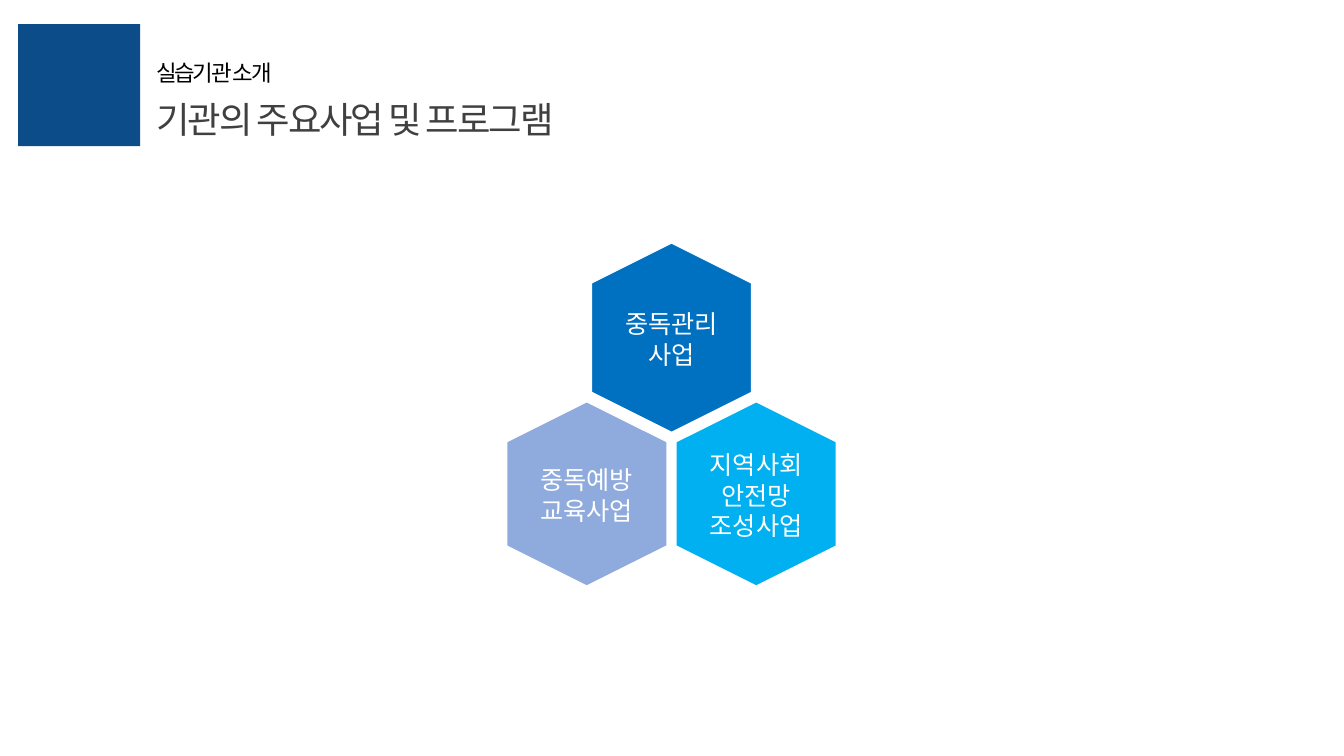
import pptx
import pptx.dml.color
import pptx.enum.shapes
import pptx.enum.text
import pptx.oxml.ns
import pptx.util
from lxml import etree

Inches = pptx.util.Inches
Pt = pptx.util.Pt
RGBColor = pptx.dml.color.RGBColor
Shape = pptx.enum.shapes.MSO_SHAPE
Align = pptx.enum.text.PP_ALIGN
Anchor = pptx.enum.text.MSO_ANCHOR
qn = pptx.oxml.ns.qn

WHITE = RGBColor(0xFF, 0xFF, 0xFF)
BLACK = RGBColor(0x00, 0x00, 0x00)
GRAY = RGBColor(0x40, 0x40, 0x40)
NAVY = RGBColor(0x0C, 0x4C, 0x89)
BLUE = RGBColor(0x00, 0x70, 0xC0)
LILAC = RGBColor(0x8F, 0xAA, 0xDC)
SKY = RGBColor(0x00, 0xB0, 0xF0)


class Deck:
    """Holds the style and the current slide, and draws each kind of element."""

    face = "Noto Sans CJK KR"

    def __init__(self):
        self.prs = pptx.Presentation()
        self.prs.slide_width = Inches(13.33)
        self.prs.slide_height = Inches(7.5)
        self.slide = self.prs.slides.add_slide(self.prs.slide_layouts[5])

    def style(self, para, size, color, align, space=0):
        font = para.font
        font.name, font.size, font.color.rgb = self.face, Pt(size), color
        props = para._p.pPr.find(qn("a:defRPr"))
        etree.SubElement(props, qn("a:ea")).set("typeface", self.face)
        if space:
            props.set("spc", str(int(space * 100)))
        para.alignment = align

    def place(self, shape, box):
        shape.left, shape.top, shape.width, shape.height = map(Inches, box)

    def head(self, shape, text, box, size, color):
        self.place(shape, box)
        frame = shape.text_frame
        frame.text = text
        frame.word_wrap = True
        frame.vertical_anchor = Anchor.TOP
        frame.auto_size = pptx.enum.text.MSO_AUTO_SIZE.SHAPE_TO_FIT_TEXT
        self.style(frame.paragraphs[0], size, color, Align.LEFT, -1.5)

    def title(self, text, box):
        self.head(self.slide.shapes.title, text, box, 26, GRAY)

    def topic(self, text, box):
        shape = self.slide.shapes.add_textbox(0, 0, 0, 0)
        self.head(shape, text, box, 16, BLACK)

    def block(self, kind, box, fill):
        shape = self.slide.shapes.add_shape(kind, *map(Inches, box))
        shape.shadow.inherit = False
        shape.fill.solid()
        shape.fill.fore_color.rgb = fill
        shape.line.fill.background()
        return shape

    def label(self, lines, x, y, side=1.4):
        box = (x - side / 2, y - side / 2, side, side)
        frame = self.slide.shapes.add_textbox(*map(Inches, box)).text_frame
        frame.text = "\n".join(lines)
        frame.word_wrap = True
        frame.vertical_anchor = Anchor.MIDDLE
        frame.margin_left = frame.margin_right = Inches(0.08)
        frame.margin_top = frame.margin_bottom = Inches(0.08)
        for para in frame.paragraphs:
            self.style(para, 18, WHITE, Align.CENTER)
            para.line_spacing = 0.9
            para.space_after = Pt(2.25)

    def cell(self, lines, x, y, long, fill, wide=1.59):
        box = (x - long / 2, y - wide / 2, long, wide)
        shape = self.block(Shape.HEXAGON, box, fill)
        shape.adjustments[0] = 0.25
        shape.rotation = 90
        shape.line.color.rgb = WHITE
        shape.line.width = Pt(1)
        self.label(lines, x, y + 0.03)


def main():
    deck = Deck()
    deck.block(Shape.RECTANGLE, (0.18, 0.24, 1.21, 1.21), NAVY)
    deck.topic("실습기관 소개", (1.45, 0.54, 5.55, 0.37))
    deck.title("기관의 주요사업 및 프로그램", (1.45, 0.91, 6.85, 0.54))
    mid, step, low = 6.66, 0.84, 4.9
    deck.cell(["중독관리", "사업"], mid, 3.35, 1.88, BLUE)
    deck.cell(["중독예방", "교육사업"], mid - step, low, 1.83, LILAC)
    deck.cell(["지역사회", "안전망", "조성사업"], mid + step, low, 1.83, SKY)
    deck.prs.save("out.pptx")


if __name__ == "__main__":
    main()
